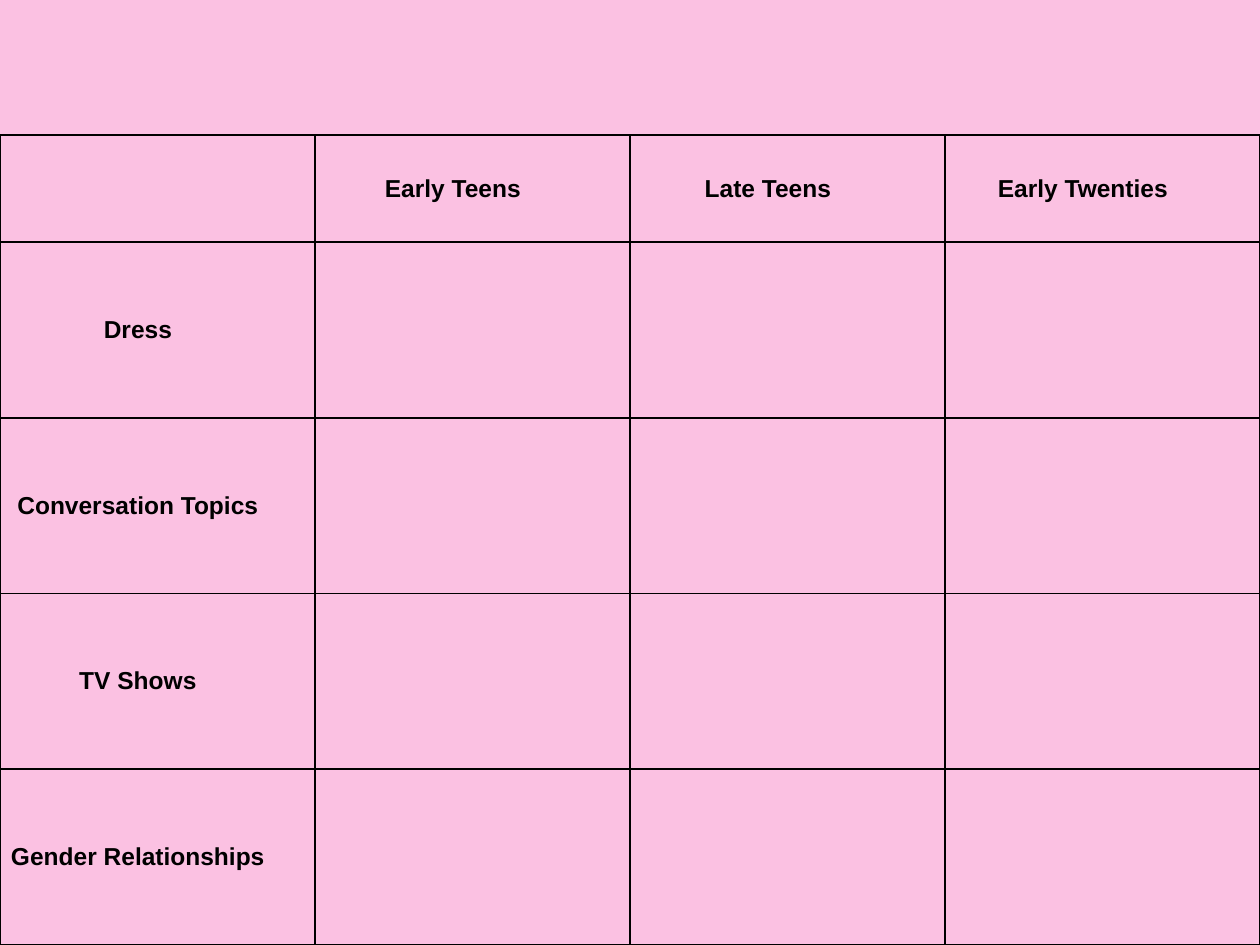
from lxml.etree import SubElement
from pptx import Presentation
from pptx.dml.color import RGBColor
from pptx.enum.text import MSO_ANCHOR, PP_ALIGN
from pptx.oxml.ns import qn
from pptx.util import Cm, Pt

COLORS = {"background": "FBC1E2", "ink": "000000"}
AGES = ["Early Teens", "Late Teens", "Early Twenties"]
TOPICS = ["Dress", "Conversation Topics", "TV Shows", "Gender Relationships"]


def add_borders(cell):
    properties = cell._tc.get_or_add_tcPr()
    for side in ("lnL", "lnR", "lnT", "lnB"):
        line = SubElement(properties, qn(f"a:{side}"), w=str(Pt(1)))
        fill = SubElement(line, qn("a:solidFill"))
        SubElement(fill, qn("a:srgbClr"), val=COLORS["ink"])


def write_label(cell, text):
    cell.vertical_anchor = MSO_ANCHOR.MIDDLE
    cell.margin_left, cell.margin_right = Cm(0.18), Cm(0.97)
    cell.margin_top = cell.margin_bottom = 0
    para = cell.text_frame.paragraphs[0]
    para.alignment = PP_ALIGN.CENTER
    span = para.add_run()
    span.text = text
    span.font.name = "Arial"
    span.font.size = Pt(14)
    span.font.bold = True
    span.font.color.rgb = RGBColor.from_string(COLORS["ink"])


def add_comparison_table(page, left, top, width, height, header_height):
    rows, columns = len(TOPICS) + 1, len(AGES) + 1
    table = page.shapes.add_table(rows, columns, left, top, width, height).table
    table.first_row = False
    table.horz_banding = False
    for column in table.columns:
        column.width = width // columns
    for row in table.rows:
        row.height = (height - header_height) // len(TOPICS)
    table.rows[0].height = header_height
    for cell in table.iter_cells():
        add_borders(cell)
        cell.fill.background()
    for index, age in enumerate(AGES, 1):
        write_label(table.cell(0, index), age)
    for index, topic in enumerate(TOPICS, 1):
        write_label(table.cell(index, 0), topic)


def main():
    deck = Presentation()
    deck.slide_width, deck.slide_height = Cm(25.4), Cm(19.05)
    page = deck.slides.add_slide(deck.slide_layouts[6])
    fill = page.background.fill
    fill.solid()
    fill.fore_color.rgb = RGBColor.from_string(COLORS["background"])
    add_comparison_table(page, Cm(0), Cm(2.72), Cm(25.4), Cm(16.33), Cm(2.16))
    deck.save("out.pptx")


if __name__ == "__main__":
    main()
